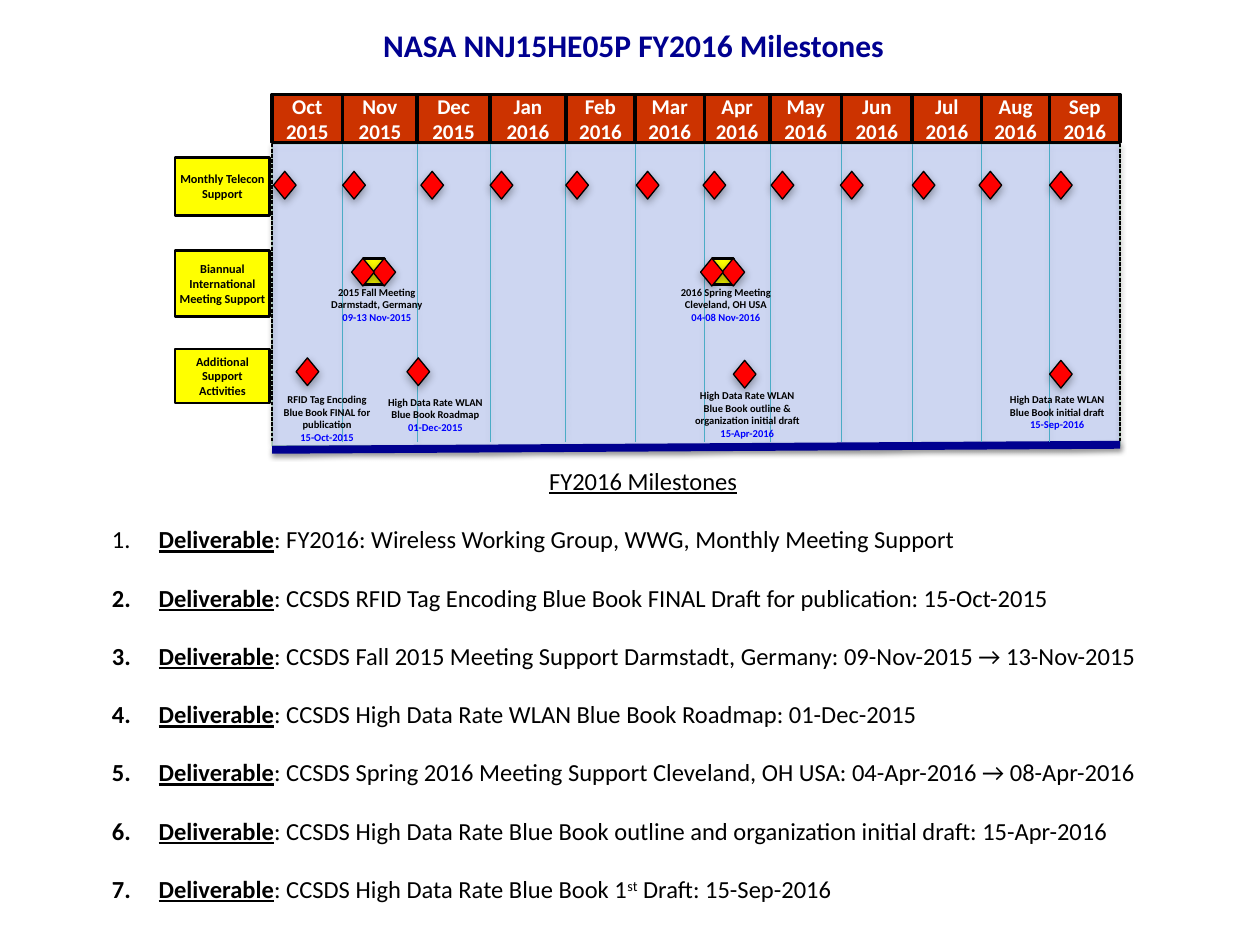
from lxml import etree
from pptx import Presentation
from pptx.dml.color import RGBColor
from pptx.enum import dml, shapes, text
from pptx.oxml import ns
from pptx.util import Inches, Pt

COLORS = {
    "navy": "000090", "black": "000000", "white": "FFFFFF", "date": "0000FF",
    "month": "CC3300", "label": "FFFF00", "marker": "FF0000",
    "panel": "3366FF", "panel_edge": "008000", "grid": "4BACC6",
}
FONT = "Calibri"
MONTHS = ["Oct", "Nov", "Dec", "Jan", "Feb", "Mar",
          "Apr", "May", "Jun", "Jul", "Aug", "Sep"]
# Offsets from the left edge of the timeline, in inches
MONTH_EDGES = [0, 0.56, 1.15, 1.73, 2.33, 2.88, 3.43,
               3.95, 4.52, 5.08, 5.63, 6.17, 6.73]
TELECONS = [0.01, 0.56, 1.18, 1.73, 2.33, 2.89, 3.42,
            3.96, 4.51, 5.08, 5.61, 6.17]
HEADER_H = 0.38
ROW_LABELS = [  # top, height, lines
    (0.5, 0.46, ["Monthly Telecon", "Support"]),
    (1.24, 0.52, ["Biannual", "International", "Meeting Support"]),
    (2.02, 0.43, ["Additional", "Support", "Activities"]),
]
MEETINGS = [  # left, lines
    (0.24, ["2015 Fall Meeting", "Darmstadt, Germany", "09-13 Nov-2015"]),
    (3.01, ["2016 Spring Meeting", "Cleveland, OH USA", "04-08 Nov-2016"]),
]
ACTIVITIES = [  # marker left and top, note left, top and width, lines
    (0.19, 2.09, -0.11, 2.32, 1.09,
     ["RFID Tag Encoding", "Blue Book FINAL for publication", "15-Oct-2015"]),
    (1.07, 2.09, 0.8, 2.34, 0.99,
     ["High Data Rate WLAN", "Blue Book Roadmap", "01-Dec-2015"]),
    (3.66, 2.11, 3.18, 2.29, 1.18,
     ["High Data Rate WLAN", "Blue Book outline & organization initial draft",
      "15-Apr-2016"]),
    (6.17, 2.11, 5.64, 2.32, 1.18,
     ["High Data Rate WLAN", "Blue Book initial draft", "15-Sep-2016"]),
]
DELIVERABLES = [
    "FY2016: Wireless Working Group, WWG, Monthly Meeting Support",
    "CCSDS RFID Tag Encoding Blue Book FINAL Draft for publication: 15-Oct-2015",
    "CCSDS Fall 2015 Meeting Support Darmstadt, Germany: 09-Nov-2015 → 13-Nov-2015",
    "CCSDS High Data Rate WLAN Blue Book Roadmap: 01-Dec-2015",
    "CCSDS Spring 2016 Meeting Support Cleveland, OH USA: 04-Apr-2016 → 08-Apr-2016",
    "CCSDS High Data Rate Blue Book outline and organization initial draft: 15-Apr-2016",
    "CCSDS High Data Rate Blue Book 1^st^ Draft: 15-Sep-2016",
]


def rgb(name):
    return RGBColor.from_string(COLORS[name])


def add_sub(parent, tag, **attributes):
    return etree.SubElement(parent, ns.qn(tag), attributes)


def set_alpha(fill, percent):
    """Make the solid colour of a fill partly transparent."""
    color = fill._xPr.find(ns.qn("a:solidFill"))[0]
    add_sub(color, "a:alpha", val=str(percent * 1000))


def add_shadow(sp_pr, blur, distance, alpha):
    effects = sp_pr.find(ns.qn("a:effectLst"))
    if effects is None:
        effects = add_sub(sp_pr, "a:effectLst")
    shadow = add_sub(effects, "a:outerShdw", blurRad=str(Pt(blur)),
                     dist=str(Pt(distance)), dir="5400000", rotWithShape="0")
    color = add_sub(shadow, "a:srgbClr", val=COLORS["black"])
    add_sub(color, "a:alpha", val=str(alpha * 1000))


def add_run(paragraph, words, size, color="black", bold=False, underline=False):
    run = paragraph.add_run()
    run.text = words
    run.font.name, run.font.size = FONT, Pt(size)
    run.font.bold, run.font.underline = bold, underline
    run.font.color.rgb = rgb(color)
    return run


def add_lines(frame, lines, size, colors):
    """Fill a frame with centred bold lines, one colour for each."""
    for index, (line, color) in enumerate(zip(lines, colors)):
        paragraph = frame.paragraphs[0] if index == 0 else frame.add_paragraph()
        paragraph.alignment = text.PP_ALIGN.CENTER
        add_run(paragraph, line, size, color, bold=True)


def add_block(slide, kind, left, top, width, height, fill, edge="black", weight=1.5):
    block = slide.shapes.add_shape(kind, Inches(left), Inches(top),
                                   Inches(width), Inches(height))
    block.fill.solid()
    block.fill.fore_color.rgb = rgb(fill)
    block.line.color.rgb = rgb(edge)
    block.line.width = Pt(weight)
    block.shadow.inherit = False
    return block


def add_label(slide, left, top, width, height, fill, lines, size, color, weight):
    label = add_block(slide, shapes.MSO_SHAPE.RECTANGLE, left, top, width, height,
                      fill, weight=weight)
    label.text_frame.word_wrap = False
    label.text_frame.vertical_anchor = text.MSO_ANCHOR.MIDDLE
    add_lines(label.text_frame, lines, size, [color] * len(lines))


def add_marker(slide, left, top):
    marker = add_block(slide, shapes.MSO_SHAPE.DIAMOND, left, top, 0.18, 0.22,
                       "marker", weight=0.75)
    add_shadow(marker._element.spPr, 5, 1.8, 35)


def add_rule(slide, x1, y1, x2, y2, color, weight, dash=None):
    rule = slide.shapes.add_connector(shapes.MSO_CONNECTOR.STRAIGHT, Inches(x1),
                                      Inches(y1), Inches(x2), Inches(y2))
    rule.line.color.rgb = rgb(color)
    rule.line.width = Pt(weight)
    if dash:
        rule.line.dash_style = dash
    add_shadow(rule._element.spPr, 3.1, 1.6, 38)


def add_note(slide, left, top, width, lines):
    """Two lines on the milestone and its date in blue."""
    note = slide.shapes.add_textbox(Inches(left), Inches(top), Inches(width), Inches(0.4))
    note.text_frame.word_wrap = True
    add_lines(note.text_frame, lines, 6, ["black", "black", "date"])


def add_title(slide, left, top, width, height):
    title = slide.shapes.title
    title.left, title.top = Inches(left), Inches(top)
    title.width, title.height = Inches(width), Inches(height)
    title.text_frame.auto_size = text.MSO_AUTO_SIZE.NONE
    add_lines(title.text_frame, ["NASA NNJ15HE05P FY2016 Milestones"], 18, ["navy"])


def add_calendar(slide, left, top, width, height):
    """Month headings over a tinted panel with dotted month lines."""
    body_top, bottom = top + HEADER_H + 0.01, top + height
    panel = add_block(slide, shapes.MSO_SHAPE.RECTANGLE, left, body_top, width,
                      bottom - body_top, "panel", "panel_edge", 0.75)
    set_alpha(panel.fill, 18)
    set_alpha(panel.line.fill, 33)
    add_shadow(panel._element.spPr, 3.1, 1.8, 35)
    for x in (left, left + width):
        add_rule(slide, x, body_top, x, bottom - 0.04, "black", 0.75,
                 dml.MSO_LINE.SQUARE_DOT)
    add_rule(slide, left, bottom + 0.03, left + width, bottom - 0.01, "navy", 4.5)
    for edge in MONTH_EDGES[1:-1]:
        add_rule(slide, left + edge, body_top, left + edge, bottom - 0.04, "grid", 0.25,
                 dml.MSO_LINE.ROUND_DOT)
    for index, month in enumerate(MONTHS):
        start, end = MONTH_EDGES[index:index + 2]
        year = "2015" if index < 3 else "2016"
        add_label(slide, left + start, top, end - start, HEADER_H, "month",
                  [month, year], 12, "white", 2)


def add_milestones(slide, left, top):
    """Row labels, markers and notes on the calendar that starts at left, top."""
    for row_top, height, lines in ROW_LABELS:
        add_label(slide, left - 0.77, top + row_top, 0.75, height, "label", lines,
                  7, "black", 1.5)
    for x in TELECONS:
        add_marker(slide, left + x, top + 0.61)
    for x, lines in MEETINGS:
        start = left + x
        add_note(slide, start, top + 1.47, 1.18, lines)
        add_block(slide, shapes.MSO_SHAPE.RECTANGLE, start + 0.48, top + 1.3,
                  0.17, 0.21, "label")
        for offset in (0.56, 0.39):
            add_marker(slide, start + offset, top + 1.3)
    for x, y, note_x, note_y, note_width, lines in ACTIVITIES:
        add_note(slide, left + note_x, top + note_y, note_width, lines)
        add_marker(slide, left + x, top + y)


def add_deliverables(slide, left, top, width, height):
    box = slide.shapes.add_textbox(Inches(left), Inches(top), Inches(width), Inches(height))
    frame = box.text_frame
    frame.word_wrap = True
    heading = frame.paragraphs[0]
    heading.alignment = text.PP_ALIGN.CENTER
    heading.space_after = Pt(16.5)
    add_run(heading, "FY2016 Milestones", 14, underline=True)
    for number, deliverable in enumerate(DELIVERABLES, 1):
        item = frame.add_paragraph()
        item.space_after = Pt(16.5)
        properties = item._p.get_or_add_pPr()
        properties.set("marL", str(Inches(0.37)))
        properties.set("indent", str(-Inches(0.37)))
        if number == 1:
            add_run(item, "1.\t", 14)
        else:
            add_sub(properties, "a:buFont", typeface="+mj-lt")
            add_sub(properties, "a:buAutoNum", type="arabicPeriod", startAt="2")
        add_run(item, "Deliverable", 14, bold=True, underline=True)
        for index, part in enumerate((": " + deliverable).split("^")):
            run = add_run(item, part, 14)
            if index == 1:
                run.font._element.set("baseline", "30000")


def main():
    deck = Presentation()
    deck.slide_width, deck.slide_height = Inches(10), Inches(7.5)
    slide = deck.slides.add_slide(deck.slide_layouts[5])
    add_title(slide, 2.2, 0.15, 5.66, 0.41)
    add_calendar(slide, 2.16, 0.75, MONTH_EDGES[-1], 2.79)
    add_milestones(slide, 2.16, 0.75)
    add_deliverables(slide, 0.79, 3.65, 8.63, 3.64)
    deck.save("out.pptx")


if __name__ == "__main__":
    main()
